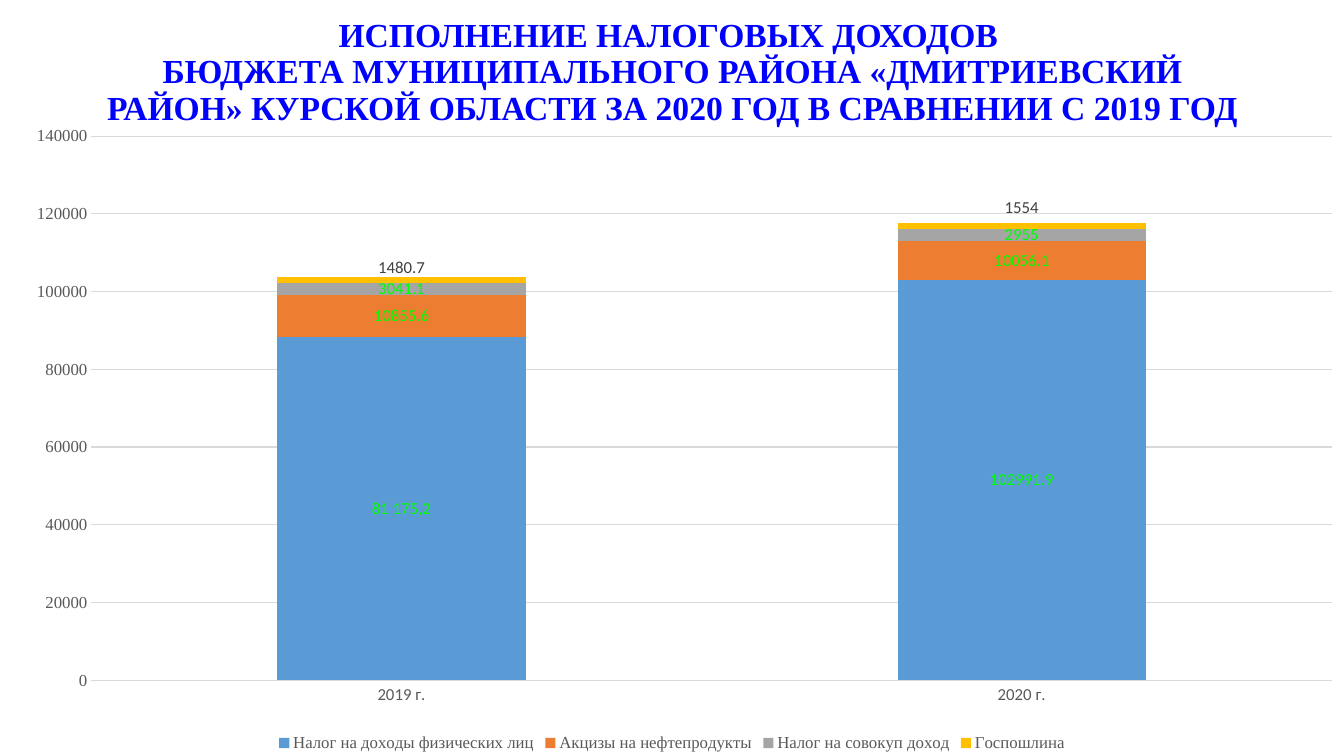
import pptx
import pptx.chart.data
import pptx.dml.color
import pptx.enum.chart
import pptx.enum.text
import pptx.oxml
import pptx.oxml.ns
import pptx.util

Inches = pptx.util.Inches
SERIF = "Times New Roman"
SANS = "Calibri"
GREY = "595959"
GREEN = "00FF00"
TITLE = (
    "ИСПОЛНЕНИЕ НАЛОГОВЫХ ДОХОДОВ \v"
    "БЮДЖЕТА МУНИЦИПАЛЬНОГО РАЙОНА «ДМИТРИЕВСКИЙ РАЙОН» "
    "КУРСКОЙ ОБЛАСТИ ЗА 2020 ГОД В СРАВНЕНИИ С 2019 ГОД"
)
YEARS = ["2019 г.", "2020 г."]
TAXES = [
    ("Налог на доходы физических лиц", (88254.7, 102991.9), "5B9BD5", GREEN),
    ("Акцизы на нефтепродукты", (10855.6, 10056.1), "ED7D31", GREEN),
    ("Налог на совокуп доход", (3041.1, 2955), "A5A5A5", GREEN),
    ("Госпошлина", (1480.7, 1554), "FFC000", "404040"),
]


def color(value):
    return pptx.dml.color.RGBColor.from_string(value)


def style_font(font, name, size, value, bold=False):
    font.name = name
    font.size = pptx.util.Pt(size)
    font.bold = bold
    font.color.rgb = color(value)


def write_text(frame, text, name=SANS, size=12, value=GREY, bold=False, spacing=None):
    para = frame.paragraphs[0]
    para.text = text
    para.alignment = pptx.enum.text.PP_ALIGN.CENTER
    para.line_spacing = spacing
    for span in para.runs:
        style_font(span.font, name, size, value, bold)


def make_layout(**settings):
    items = "".join(f'<c:{key} val="{value}"/>' for key, value in settings.items())
    return pptx.oxml.parse_xml(
        f'<c:layout {pptx.oxml.ns.nsdecls("c")}>'
        f"<c:manualLayout>{items}</c:manualLayout></c:layout>"
    )


def add_title(page):
    box = page.shapes.title
    box.left, box.top = Inches(0.92), Inches(0)
    box.width, box.height = Inches(11.5), Inches(1.45)
    frame = box.text_frame
    frame.word_wrap = True
    frame.auto_size = pptx.enum.text.MSO_AUTO_SIZE.NONE
    frame.vertical_anchor = pptx.enum.text.MSO_ANCHOR.MIDDLE
    write_text(frame, TITLE, name=SERIF, size=24, value="0000FF", bold=True, spacing=0.9)


def style_axis(axis, name):
    axis.major_tick_mark = pptx.enum.chart.XL_TICK_MARK.NONE
    axis.minor_tick_mark = pptx.enum.chart.XL_TICK_MARK.NONE
    axis.format.line.fill.background()
    style_font(axis.tick_labels.font, name, 12, GREY)


def style_series(series, fill, label_color):
    series.format.fill.solid()
    series.format.fill.fore_color.rgb = color(fill)
    series.invert_if_negative = False
    labels = series.data_labels
    labels.show_value = True
    style_font(labels.font, SANS, 12, label_color)


def raise_labels(series, offsets, label_color):
    for index, offset in enumerate(offsets):
        style_font(series.points[index].data_label.font, SANS, 12, label_color)
        label = series._element.xpath(f"c:dLbls/c:dLbl[c:idx/@val={index}]")[0]
        label.insert(1, make_layout(x=0, y=offset))


def place_plot(chart):
    area = chart._chartSpace.xpath("c:chart/c:plotArea")[0]
    for old in area.xpath("c:layout"):
        area.remove(old)
    area.insert(0, make_layout(
        layoutTarget="inner", xMode="edge", yMode="edge",
        x=0.068, y=0.016, w=0.923, h=0.864,
    ))


def add_tax_chart(page):
    data = pptx.chart.data.CategoryChartData()
    data.categories = YEARS
    for name, values, _, _ in TAXES:
        data.add_series(name, values)
    chart = page.shapes.add_chart(
        pptx.enum.chart.XL_CHART_TYPE.COLUMN_STACKED,
        Inches(0), Inches(1.25), Inches(13.33), Inches(6.25), data,
    ).chart
    chart.has_title = False
    style_font(chart.font, SANS, 10, "000000")
    style_axis(chart.category_axis, SANS)
    style_axis(chart.value_axis, SERIF)
    chart.value_axis.maximum_scale = 140000
    chart.value_axis.minimum_scale = 0
    chart.value_axis.major_unit = 20000
    grid = chart.value_axis.major_gridlines.format.line
    grid.color.rgb = color("D9D9D9")
    grid.width = pptx.util.Pt(0.75)
    chart.has_legend = True
    chart.legend.position = pptx.enum.chart.XL_LEGEND_POSITION.BOTTOM
    chart.legend.include_in_layout = False
    style_font(chart.legend.font, SERIF, 12, GREY)
    plot = chart.plots[0]
    plot.gap_width = 150
    plot.overlap = 100
    plot.vary_by_categories = False
    for series, (_, _, fill, label_color) in zip(plot.series, TAXES):
        style_series(series, fill, label_color)
    income, duty = plot.series[0], plot.series[-1]
    write_text(income.points[0].data_label.text_frame, "81 175,2", value=GREEN)
    raise_labels(duty, (-0.02, -0.03), TAXES[-1][3])
    place_plot(chart)


def main():
    deck = pptx.Presentation()
    deck.slide_width = Inches(13.33)
    deck.slide_height = Inches(7.5)
    page = deck.slides.add_slide(deck.slide_layouts[5])
    add_title(page)
    add_tax_chart(page)
    deck.save("out.pptx")


if __name__ == "__main__":
    main()
